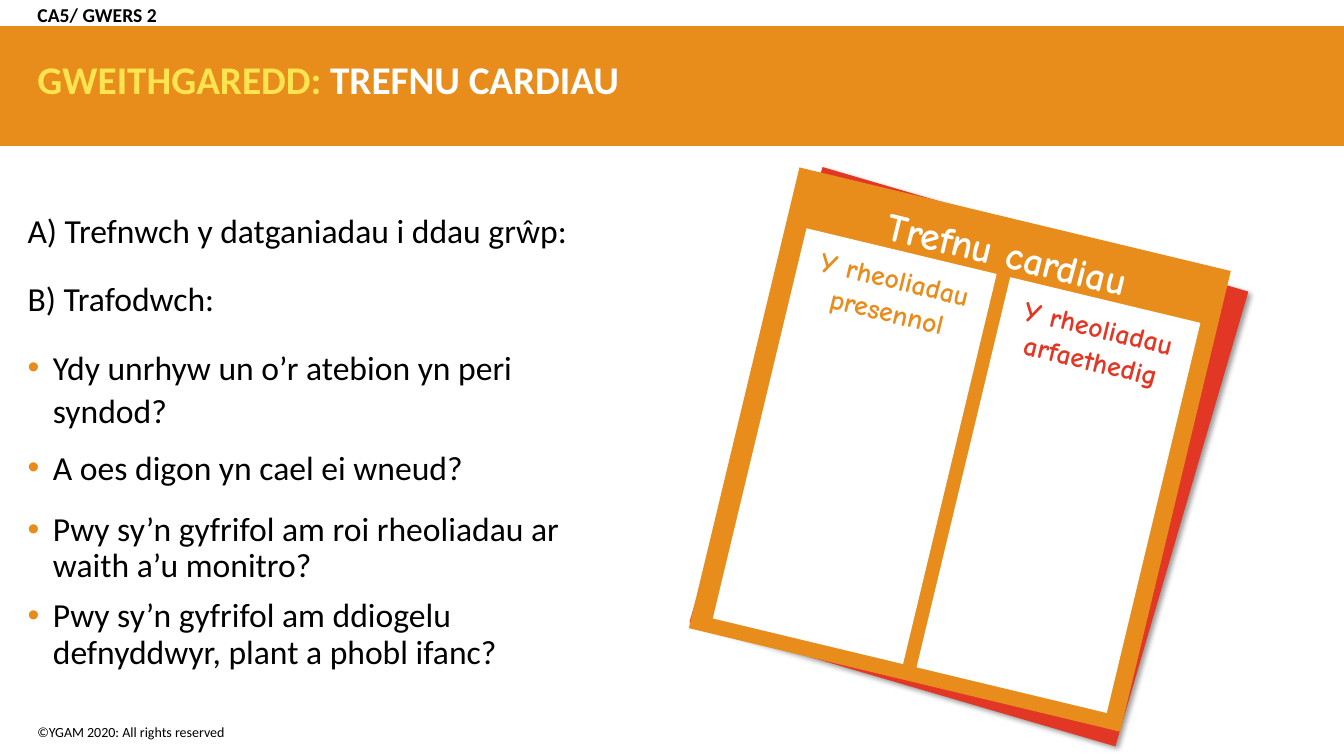
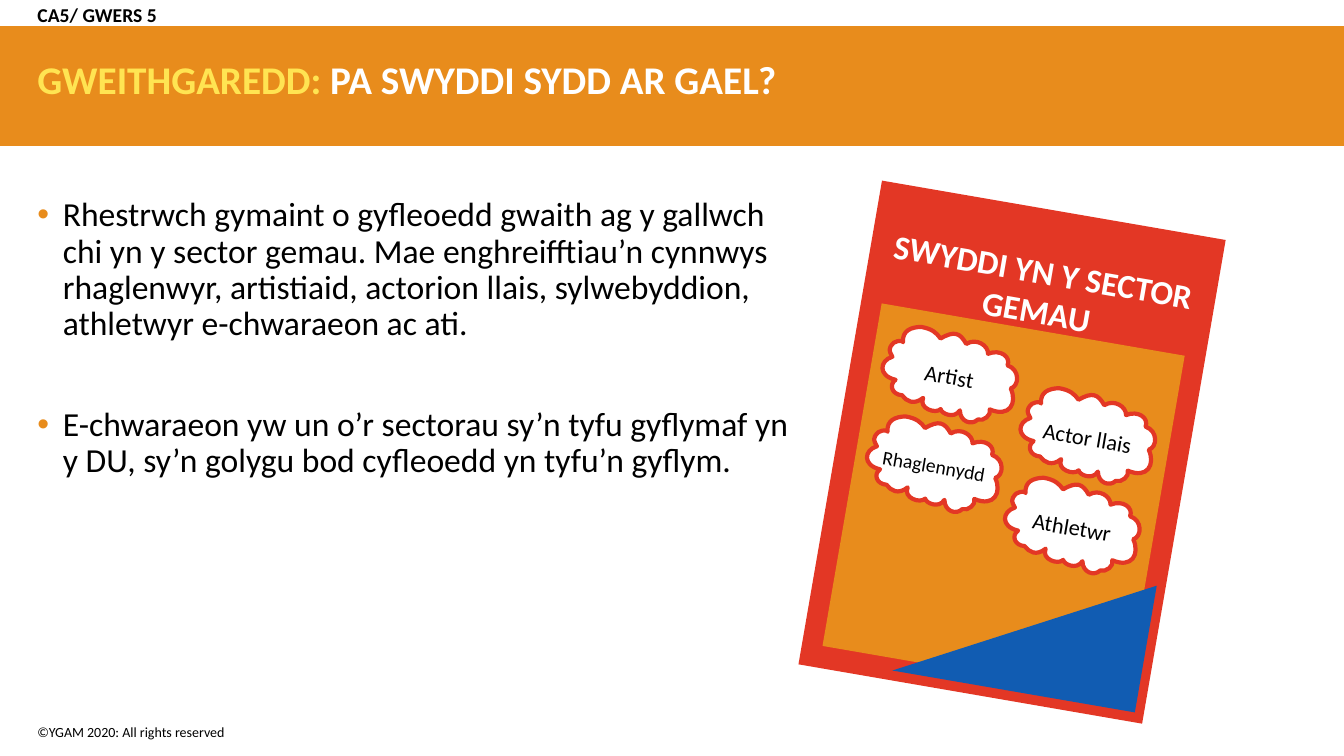
from math import cos, radians, sin
from typing import NamedTuple

from lxml.etree import SubElement
from pptx import Presentation
from pptx.dml.color import RGBColor
from pptx.enum.shapes import MSO_SHAPE
from pptx.enum.text import MSO_ANCHOR, MSO_AUTO_SIZE, PP_ALIGN
from pptx.oxml.ns import qn
from pptx.util import Cm, Pt

ORANGE = RGBColor(0xE8, 0x8C, 0x1C)
YELLOW = RGBColor(0xFF, 0xE4, 0x52)
RED = RGBColor(0xE3, 0x37, 0x25)
BLUE = RGBColor(0x11, 0x5C, 0xB2)
WHITE = RGBColor(0xFF, 0xFF, 0xFF)
BLACK = RGBColor(0, 0, 0)

BODY_FONT = "Calibri"
HAND_FONT = "Comic Neue"
BULLET_INDENT = Cm(0.64)

CLOUD_WIDTH = 3.38
CLOUD_GRID = 133
CLOUD_START = (16, 17)
CLOUD_CURVES = (
    ((13, 6), (21, 1), (31, -1)),
    ((42, -1), (47, 2), (52, 7)),
    ((64, -3), (70, -2), (78, 8)),
    ((87, 0), (100, 6), (101, 14)),
    ((112, 7), (124, 13), (122, 22)),
    ((135, 24), (137, 40), (129, 44)),
    ((138, 57), (133, 73), (112, 68)),
    ((115, 73), (108, 81), (102, 80)),
    ((97, 87), (85, 85), (83, 74)),
    ((79, 84), (65, 80), (64, 76)),
    ((60, 82), (42, 79), (45, 68)),
    ((37, 77), (29, 74), (24, 69)),
    ((14, 70), (9, 61), (15, 55)),
    ((-3, 54), (-4, 39), (8, 33)),
    ((4, 28), (2, 26), (7, 19)),
    ((12, 15), (16, 16), (16, 17)),
)


class Box(NamedTuple):
    left: float
    top: float
    width: float
    height: float

    def inner(self, left, top, width, height):
        return Box(self.left + left, self.top + top, width, height)

    def emu(self):
        return [Cm(length) for length in self]


class Item(NamedTuple):
    text: str
    bullet: bool = True
    line_spacing: float = 0.9
    before: int = 10
    after: int = 0


BAND = Box(0, 0.66, 33.87, 3.02)
TITLE = Box(0.69, 0.56, 32.41, 3.02)
LESSON_TAG = Box(0.69, -0.15, 14.88, 1.12)
FOOTER = Box(0.69, 18.11, 14.33, 0.69)


def style_font(paragraph, size, color, bold=False, name=BODY_FONT):
    font = paragraph.font
    font.name, font.size, font.bold = name, Pt(size), bold
    font.color.rgb = color


def fill_shape(shape, color):
    shape.shadow.inherit = False
    shape.fill.solid()
    shape.fill.fore_color.rgb = color
    shape.line.fill.background()


def add_rectangle(slide, box, color):
    shape = slide.shapes.add_shape(MSO_SHAPE.RECTANGLE, *box.emu())
    fill_shape(shape, color)
    return shape


def add_text(slide, box, text, size, color, bold=False, name=BODY_FONT, align=PP_ALIGN.CENTER):
    shape = slide.shapes.add_textbox(*box.emu())
    frame = shape.text_frame
    frame.word_wrap = True
    paragraph = frame.paragraphs[0]
    paragraph.text = text
    paragraph.alignment = align
    style_font(paragraph, size, color, bold, name)
    return shape


def add_outline(slide, points, color):
    corners = [(Cm(x), Cm(y)) for x, y in points]
    builder = slide.shapes.build_freeform(*corners[0], scale=1.0)
    builder.add_line_segments(corners[1:], close=True)
    shape = builder.convert_to_shape()
    fill_shape(shape, color)
    return shape


def curve_outline(shape):
    lines = list(shape.element.iter(qn("a:lnTo")))
    for first in range(0, len(lines), 3):
        group = lines[first:first + 3]
        curve = group[0].makeelement(qn("a:cubicBezTo"))
        group[0].addprevious(curve)
        for line in group:
            curve.append(line[0])
            line.getparent().remove(line)


def tilt(shape, card, angle):
    turn = radians(angle)
    center_x, center_y = Cm(card.left + card.width / 2), Cm(card.top + card.height / 2)
    offset_x = shape.left + shape.width / 2 - center_x
    offset_y = shape.top + shape.height / 2 - center_y
    shape.left = round(center_x + offset_x * cos(turn) - offset_y * sin(turn) - shape.width / 2)
    shape.top = round(center_y + offset_x * sin(turn) + offset_y * cos(turn) - shape.height / 2)
    shape.rotation = angle


def add_drop_shadow(shape):
    effects = shape.element.spPr.find(qn("a:effectLst"))
    shadow = SubElement(effects, qn("a:outerShdw"), blurRad=str(Pt(4)), dist=str(Pt(3)),
                        dir="2700000", algn="tl", rotWithShape="0")
    color = SubElement(shadow, qn("a:srgbClr"), val=str(BLACK))
    SubElement(color, qn("a:alpha"), val="40000")


def set_bullet(paragraph, visible):
    properties = paragraph._p.get_or_add_pPr()
    indent = BULLET_INDENT if visible else 0
    properties.set("marL", str(indent))
    properties.set("indent", str(-indent))
    if visible:
        color = SubElement(properties, qn("a:buClr"))
        SubElement(color, qn("a:srgbClr"), val=str(ORANGE))
        SubElement(properties, qn("a:buFont"), typeface="Arial")
        SubElement(properties, qn("a:buChar"), char="•")
    else:
        SubElement(properties, qn("a:buNone"))


def place_placeholder(placeholder, box, anchor):
    placeholder.left, placeholder.top, placeholder.width, placeholder.height = box.emu()
    frame = placeholder.text_frame
    frame.word_wrap = True
    frame.auto_size = MSO_AUTO_SIZE.NONE
    frame.vertical_anchor = anchor
    return frame


def fill_title(slide, text):
    frame = place_placeholder(slide.shapes.title, TITLE, MSO_ANCHOR.MIDDLE)
    paragraph = frame.paragraphs[0]
    paragraph.alignment = PP_ALIGN.LEFT
    paragraph.line_spacing = 0.9
    style_font(paragraph, 28, WHITE, bold=True)
    for words, color in (("GWEITHGAREDD: ", YELLOW), (text, WHITE)):
        run = paragraph.add_run()
        run.text = words
        run.font.color.rgb = color


def fill_lesson_tag(slide, text):
    frame = place_placeholder(slide.placeholders[1], LESSON_TAG, MSO_ANCHOR.MIDDLE)
    paragraph = frame.paragraphs[0]
    paragraph.text = text
    set_bullet(paragraph, False)
    paragraph.line_spacing = 0.9
    paragraph.space_before = Pt(0)
    style_font(paragraph, 14, BLACK, bold=True)


def fill_body(slide, box, items):
    frame = place_placeholder(slide.placeholders[2], box, MSO_ANCHOR.TOP)
    for index, item in enumerate(items):
        paragraph = frame.add_paragraph() if index else frame.paragraphs[0]
        paragraph.text = item.text
        set_bullet(paragraph, item.bullet)
        paragraph.line_spacing = item.line_spacing
        paragraph.space_before = Pt(item.before if index else 0)
        paragraph.space_after = Pt(item.after)
        style_font(paragraph, 24, BLACK)


def add_activity_slide(presentation, layout, lesson, title, body_box, items):
    slide = presentation.slides.add_slide(layout)
    fill_title(slide, title)
    fill_lesson_tag(slide, lesson)
    fill_body(slide, body_box, items)
    return slide


def decorate_layout(layout, slide):
    band = add_rectangle(slide, BAND, ORANGE)
    footer = add_text(slide, FOOTER, "©YGAM 2020: All rights reserved", 10, BLACK,
                      align=PP_ALIGN.LEFT)
    for position, shape in enumerate((band, footer), start=2):
        layout.shapes.element.insert(position, shape.element)


def add_sorting_card(slide, card):
    angle = 13.5
    back_sheet = add_rectangle(slide, card.inner(0.23, 0.18, card.width, card.height), RED)
    back_sheet.rotation = 16.3
    add_drop_shadow(back_sheet)

    column_width, gap = 4.93, 0.35
    columns = [card.inner(0.53 + index * (column_width + gap), 1.45, column_width, 10.11)
               for index in range(2)]
    parts = [add_rectangle(slide, card, ORANGE)]
    parts += [add_rectangle(slide, column, WHITE) for column in columns]
    parts.append(add_text(slide, card.inner(0, 0.15, card.width, 1.45),
                          "Trefnu cardiau", 28, WHITE, True, HAND_FONT))
    headings = (("Y rheoliadau presennol", ORANGE), ("Y rheoliadau arfaethedig", RED))
    for column, (heading, color) in zip(columns, headings):
        parts.append(add_text(slide, column.inner(0, 0.15, column_width, 1.9),
                              heading, 20, color, True, HAND_FONT))
    for part in parts:
        tilt(part, card, angle)


def add_cloud(slide, left, top, text, size):
    unit = CLOUD_WIDTH / CLOUD_GRID
    points = [CLOUD_START, *(point for curve in CLOUD_CURVES for point in curve)]
    cloud = add_outline(slide, [(left + x * unit, top + y * unit) for x, y in points], WHITE)
    curve_outline(cloud)
    cloud.line.color.rgb = RED
    cloud.line.width = Pt(3)
    frame = cloud.text_frame
    frame.word_wrap = False
    frame.vertical_anchor = MSO_ANCHOR.MIDDLE
    paragraph = frame.paragraphs[0]
    paragraph.text = text
    paragraph.alignment = PP_ALIGN.CENTER
    style_font(paragraph, size, BLACK)
    return cloud


def add_jobs_card(slide, card):
    angle = 9.8
    parts = [
        add_rectangle(slide, card, RED),
        add_rectangle(slide, card.inner(0.52, 3.05, 7.75, 8.76), ORANGE),
        add_text(slide, card.inner(0, 0.91, card.width, 2.3),
                 "SWYDDI YN Y SECTOR GEMAU", 24, WHITE, True),
    ]
    jobs = (("Artist", 16), ("Actor llais", 16), ("Rhaglennydd", 14), ("Athletwr", 16))
    for index, (job, size) in enumerate(jobs):
        row, column = divmod(index, 2)
        left = card.left + 0.81 + column * 3.69
        top = card.top + 3.49 + row * 2.29 + column * 0.93
        parts.append(add_cloud(slide, left, top, job, size))
    corner = ((8.56, 12.12), (8.56, 8.88), (2.36, 12.12))
    parts.append(add_outline(slide, [(card.left + x, card.top + y) for x, y in corner], BLUE))
    for part in parts:
        tilt(part, card, angle)


def main():
    presentation = Presentation()
    presentation.slide_width, presentation.slide_height = Cm(33.87), Cm(19.05)
    layout = presentation.slide_layouts[3]

    sorting_slide = add_activity_slide(
        presentation, layout, "CA5/ GWERS 2", "TREFNU CARDIAU", Box(0.44, 5.09, 15.57, 12.2), (
            Item("A) Trefnwch y datganiadau i ddau grŵp:", False, 1.07, after=8),
            Item("B) Trafodwch:", False, 1.07, after=8),
            Item("Ydy unrhyw un o’r atebion yn peri syndod?", line_spacing=1.07),
            Item("A oes digon yn cael ei wneud?", line_spacing=1.07, after=8),
            Item("Pwy sy’n gyfrifol am roi rheoliadau ar waith a’u monitro?"),
            Item("Pwy sy’n gyfrifol am ddiogelu defnyddwyr, plant a phobl ifanc?"),
        ))
    decorate_layout(layout, sorting_slide)
    add_sorting_card(sorting_slide, Box(18.6, 5.36, 11.18, 11.94))

    jobs_slide = add_activity_slide(
        presentation, layout, "CA5/ GWERS 5", "PA SWYDDI SYDD AR GAEL?",
        Box(0.69, 4.86, 19.89, 8), (
            Item("Rhestrwch gymaint o gyfleoedd gwaith ag y gallwch chi yn y sector gemau. "
                 "Mae enghreifftiau’n cynnwys rhaglenwyr, artistiaid, actorion llais, "
                 "sylwebyddion, athletwyr e-chwaraeon ac ati."),
            Item("E-chwaraeon yw un o’r sectorau sy’n tyfu gyflymaf yn y DU, "
                 "sy’n golygu bod cyfleoedd yn tyfu’n gyflym.", before=46),
        ))
    add_jobs_card(jobs_slide, Box(21.11, 5.21, 8.79, 12.37))

    presentation.save("out.pptx")


if __name__ == "__main__":
    main()
